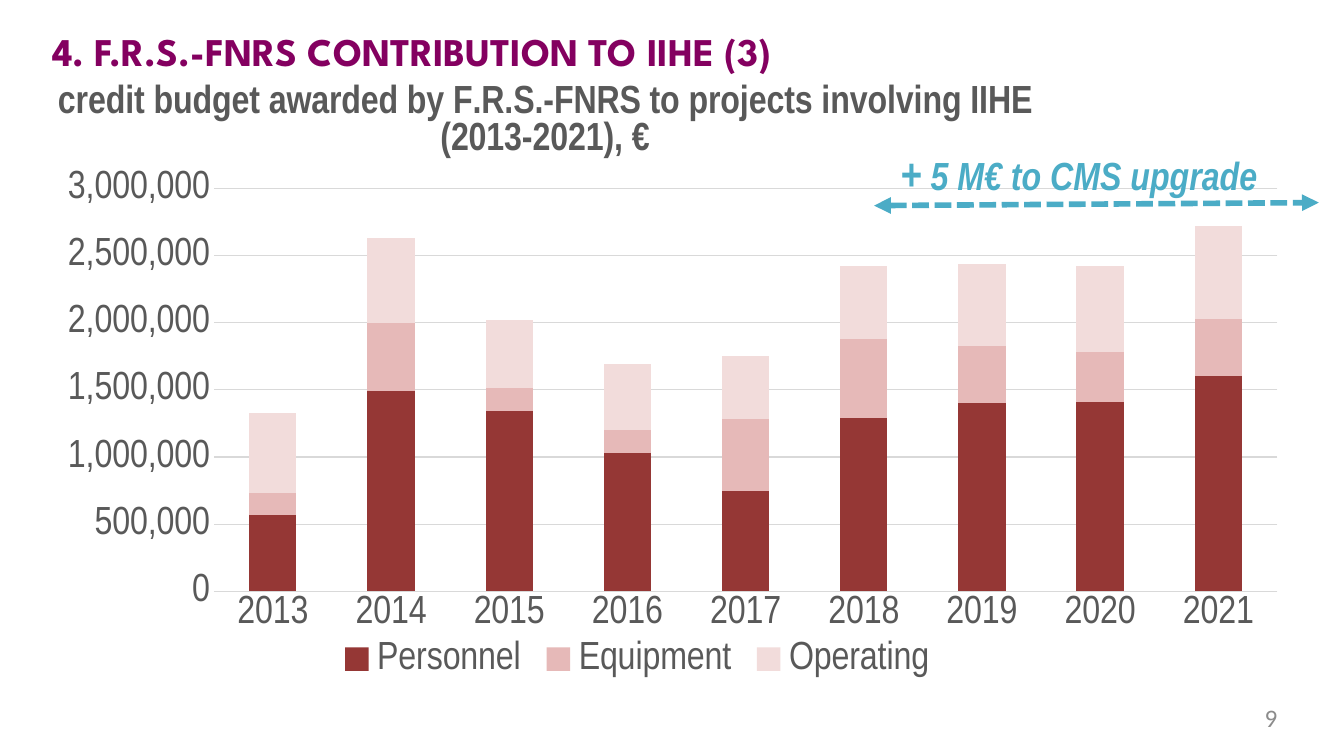
from lxml import etree
from pptx import Presentation, util as u
from pptx.chart.data import CategoryChartData
from pptx.dml.color import RGBColor
from pptx.enum import chart as charts, dml, shapes, text
from pptx.oxml import ns

PURPLE = RGBColor(0x84, 0x00, 0x60)
TEAL = RGBColor(0x4B, 0xAC, 0xC6)
DARK_GREY = RGBColor(0x59, 0x59, 0x59)
PAGE_GREY = RGBColor(0x8C, 0x8C, 0x8C)
GRID_GREY = RGBColor(0xD9, 0xD9, 0xD9)
DARK_RED = RGBColor(0x95, 0x37, 0x35)
ROSE = RGBColor(0xE6, 0xB9, 0xB8)
PALE_ROSE = RGBColor(0xF2, 0xDC, 0xDB)

YEARS = [str(year) for year in range(2013, 2022)]
# Credits in units of 10,000 euros
BUDGET = {
    "Personnel": (DARK_RED, [57, 149, 134, 103, 75, 129, 140, 141, 160]),
    "Equipment": (ROSE, [16, 51, 17, 17, 53, 59, 43, 37, 43]),
    "Operating": (PALE_ROSE, [60, 63, 51, 49, 47, 54, 61, 64, 69]),
}


def format_font(font, size=28, name="Arial Narrow", color=DARK_GREY, bold=False, italic=False):
    font.size, font.name = u.Pt(size), name
    font.bold, font.italic = bold, italic
    font.color.rgb = color


def place(parent, **position):
    """Give a chart part a manual layout, in fractions of the chart."""
    for old in parent.findall(ns.qn("c:layout")):
        parent.remove(old)
    layout = etree.Element(ns.qn("c:layout"))
    manual = etree.SubElement(layout, ns.qn("c:manualLayout"))
    if "w" in position:
        etree.SubElement(manual, ns.qn("c:layoutTarget"), val="inner")
    for mode in ("xMode", "yMode"):
        etree.SubElement(manual, ns.qn("c:" + mode), val="edge")
    for key, value in position.items():
        etree.SubElement(manual, ns.qn("c:" + key), val=str(value))
    overlay = parent.find(ns.qn("c:overlay"))
    if overlay is None:
        parent.insert(0, layout)
    else:
        overlay.addprevious(layout)


class SlideBuilder:
    def __init__(self, slide):
        self.slide = slide

    def add_text(self, box, runs, align=text.PP_ALIGN.LEFT, wrap=True, margin=None):
        shape = self.slide.shapes.add_textbox(*map(u.Inches, box))
        frame = shape.text_frame
        frame.word_wrap = wrap
        if margin is not None:
            frame.margin_left = frame.margin_right = u.Inches(margin)
            frame.margin_top = frame.margin_bottom = u.Inches(margin)
        paragraph = frame.paragraphs[0]
        paragraph.alignment = align
        for words, style in runs:
            run = paragraph.add_run()
            run.text = words
            format_font(run.font, **style)

    def add_double_arrow(self, start, end, color, width):
        line = self.slide.shapes.add_connector(
            shapes.MSO_CONNECTOR.STRAIGHT, *map(u.Inches, start + end))
        line.line.color.rgb = color
        line.line.width = u.Pt(width)
        line.line.dash_style = dml.MSO_LINE.SQUARE_DOT
        outline = line.line._get_or_add_ln()
        for tip in ("a:headEnd", "a:tailEnd"):
            etree.SubElement(outline, ns.qn(tip), type="triangle")
        etree.SubElement(line._element.spPr, ns.qn("a:effectLst"))

    def add_budget_chart(self, box, title_lines):
        data = CategoryChartData(number_format="#,##0")
        data.categories = YEARS
        for name, (_, values) in BUDGET.items():
            data.add_series(name, [value * 10_000 for value in values])
        chart = self.slide.shapes.add_chart(
            charts.XL_CHART_TYPE.COLUMN_STACKED, *map(u.Inches, box), data).chart
        format_font(chart.font)

        # Columns
        plot = chart.plots[0]
        plot.gap_width, plot.overlap = 150, 100
        plot.vary_by_categories = False
        for series in plot.series:
            series.format.fill.solid()
            series.format.fill.fore_color.rgb = BUDGET[series.name][0]

        # Axes
        years, amounts = chart.category_axis, chart.value_axis
        for axis in (years, amounts):
            axis.major_tick_mark = axis.minor_tick_mark = charts.XL_TICK_MARK.NONE
            format_font(axis.tick_labels.font)
        amounts.minimum_scale, amounts.maximum_scale = 0, 3_000_000
        amounts.major_unit = 500_000
        amounts.tick_labels.number_format = "#,##0"
        amounts.tick_labels.number_format_is_linked = False
        amounts.format.line.fill.background()
        for line in (years.format.line, amounts.major_gridlines.format.line):
            line.color.rgb = GRID_GREY
            line.width = u.Pt(0.75)

        # Title and legend
        chart.has_title = True
        frame = chart.chart_title.text_frame
        frame.text = "\n".join(title_lines)
        for paragraph in frame.paragraphs:
            paragraph.alignment = text.PP_ALIGN.CENTER
            format_font(paragraph.runs[0].font, bold=True)
        chart.has_legend = True
        chart.legend.position = charts.XL_LEGEND_POSITION.BOTTOM
        chart.legend.include_in_layout = False
        format_font(chart.legend.font)

        # Places inside the chart
        root = chart.element.find(ns.qn("c:chart"))
        place(root.find(ns.qn("c:title")), x=0.01, y=0.04)
        place(root.find(ns.qn("c:plotArea")), x=0.136, y=0.206, w=0.844, h=0.62)
        place(root.find(ns.qn("c:legend")), x=0.23, y=0.89)


def main():
    presentation = Presentation()
    presentation.slide_width = u.Inches(13.33)
    presentation.slide_height = u.Inches(7.5)
    builder = SlideBuilder(presentation.slides.add_slide(presentation.slide_layouts[6]))

    # Page number
    builder.add_text((9.6, 6.97, 3.07, 0.38),
                     [("9", dict(size=18, name="Calibri", color=PAGE_GREY))],
                     align=text.PP_ALIGN.RIGHT, margin=0)

    # Chart and heading
    builder.add_budget_chart((0.42, 0.54, 12.5, 6.45), [
        "credit budget awarded by F.R.S.-FNRS to projects involving IIHE",
        "(2013-2021), €"])
    builder.add_text((0.42, 0.22, 12.5, 0.57),
                     [("4. F.R.S.-FNRS CONTRIBUTION TO IIHE (3)",
                       dict(name="League Spartan", color=PURPLE, bold=True))])

    # Upgrade period
    note = dict(color=TEAL, bold=True, italic=True)
    builder.add_text((8.83, 1.4, 3.78, 0.64),
                     [("+", dict(note, size=32)), (" 5 M€ to CMS upgrade", note)], wrap=False)
    builder.add_double_arrow((8.67, 2.04), (13.08, 2.01), TEAL, 4)

    presentation.save("out.pptx")


if __name__ == "__main__":
    main()
